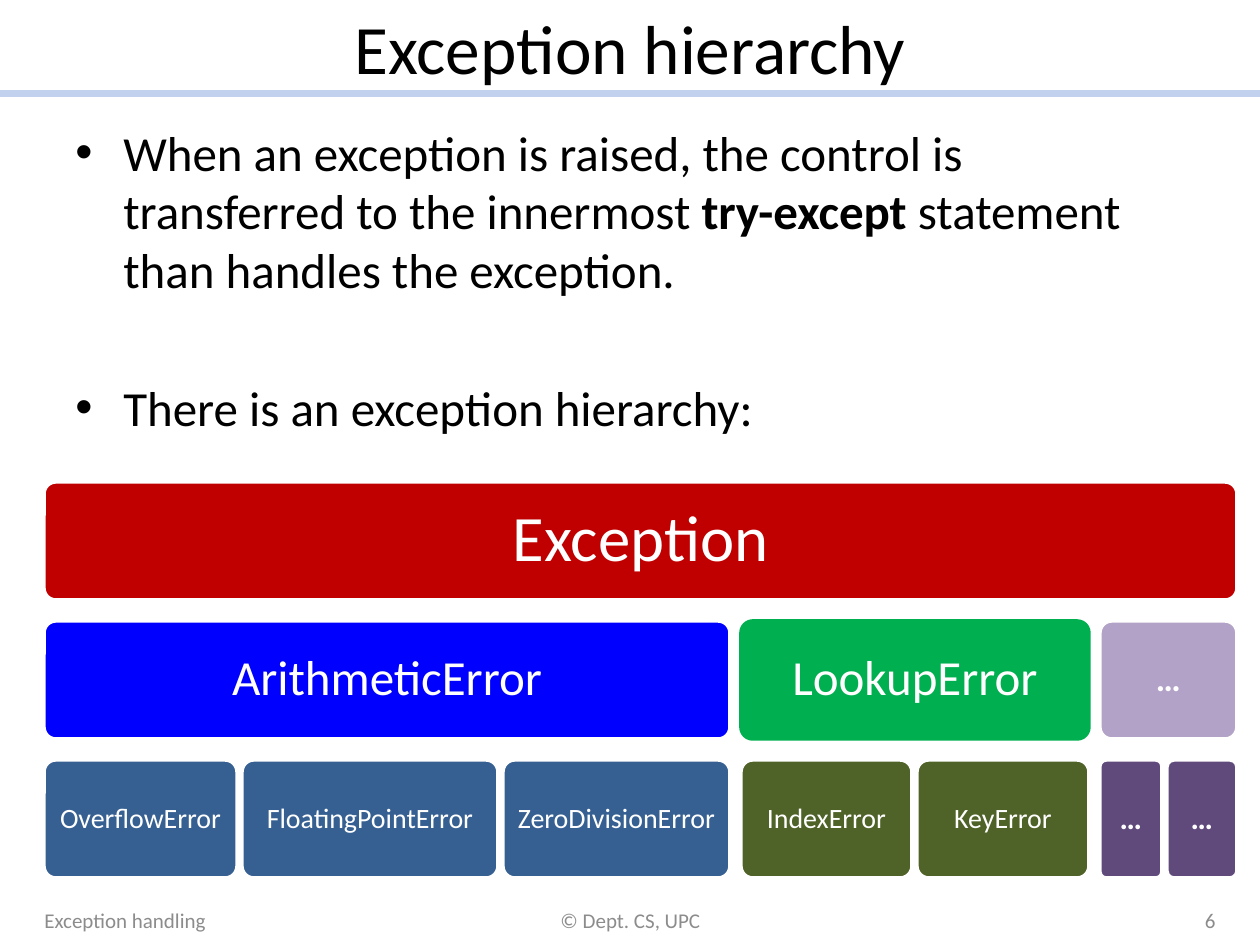
"""Build the slide on the exception hierarchy."""
from dataclasses import dataclass

from lxml import etree
from pptx import Presentation
from pptx import util as u
from pptx.dml.color import RGBColor
from pptx.enum import shapes, text
from pptx.oxml import ns

PX = 914400 // 126
CENTER, LEFT, RIGHT = text.PP_ALIGN.CENTER, text.PP_ALIGN.LEFT, text.PP_ALIGN.RIGHT


@dataclass(frozen=True)
class Theme:
    font: str = "Calibri"
    ink: str = "000000"
    paper: str = "FFFFFF"
    muted: str = "8C8C8C"
    rule: str = "C2D1ED"
    root: str = "C00000"
    title_size: float = 39.6
    body_size: int = 28
    footer_size: int = 12
    root_size: int = 37
    branch_size: int = 28
    more_size: int = 20
    leaf_size: int = 16
    more_leaf_size: int = 18


THEME = Theme()
TITLE = "Exception hierarchy"
BULLETS = [
    (["When an exception is raised, the control is transferred to the innermost ",
      ("try-except",), " statement than handles the exception."], 5.6),
    (["There is an exception hierarchy:"], 45),
]
ROOT = "Exception"
BRANCHES = [
    {"name": "ArithmeticError", "fill": "0000FF", "edge": "FFFFFF", "leaf_fill": "376092",
     "leaves": [("OverflowError", 193), ("FloatingPointError", 256), ("ZeroDivisionError", 227)]},
    {"name": "LookupError", "fill": "00B050", "edge": "00B050", "leaf_fill": "4F6228",
     "leaves": [("IndexError", 171), ("KeyError", 172)]},
    {"name": "…", "fill": "B3A2C7", "edge": "FFFFFF", "leaf_fill": "604A7B",
     "leaves": [("…", 62), ("…", 70)]},
]
FOOTERS = [("Exception handling", 32, 293, LEFT),
           ("© Dept. CS, UPC", 431, 399, CENTER),
           ("6", 935, 293, RIGHT)]

TREE_LEFT, TREE_TOP, ROW_PITCH, ROW_HEIGHT = 44, 482, 139, 118
LEAF_GAP, BRANCH_GAP = 5, 11


def px(*lengths):
    return [u.Emu(length * PX) for length in lengths]


def rgb(code):
    return RGBColor.from_string(code)


def write(paragraph, content, size, color=THEME.ink, bold=False, align=LEFT):
    """Write runs into a paragraph; a tuple marks a bold run."""
    paragraph.alignment = align
    for part in [content] if isinstance(content, str) else content:
        strong = isinstance(part, tuple)
        run = paragraph.add_run()
        run.text = part[0] if strong else part
        run.font.name = THEME.font
        run.font.size = u.Pt(size)
        run.font.bold = bold or strong
        run.font.color.rgb = rgb(color)


def add_bullet(paragraph):
    """Give a paragraph a hanging bullet."""
    properties = paragraph._p.get_or_add_pPr()
    properties.set("marL", str(48 * PX))
    properties.set("indent", str(-48 * PX))
    etree.SubElement(properties, ns.qn("a:buFont"), typeface="Arial")
    etree.SubElement(properties, ns.qn("a:buChar"), char="•")


def add_frame(slide, left, top, width, height, anchor):
    """Add a wrapping text box and return its text frame."""
    frame = slide.shapes.add_textbox(*px(left, top, width, height)).text_frame
    frame.word_wrap = True
    frame.vertical_anchor = anchor
    return frame


def add_node(slide, name, left, row, width, fill, size, edge=THEME.paper):
    """Add one rounded box of the hierarchy."""
    top = TREE_TOP + row * ROW_PITCH
    node = slide.shapes.add_shape(shapes.MSO_SHAPE.ROUNDED_RECTANGLE,
                                  *px(left, top, width, ROW_HEIGHT))
    node.adjustments[0] = 0.1
    node.shadow.inherit = False
    node.fill.solid()
    node.fill.fore_color.rgb = rgb(fill)
    node.line.color.rgb = rgb(edge)
    node.line.width = u.Pt(2)
    frame = node.text_frame
    frame.word_wrap = True
    frame.vertical_anchor = text.MSO_ANCHOR.MIDDLE
    frame.margin_left = frame.margin_right = frame.margin_top = frame.margin_bottom = px(9)[0]
    frame.paragraphs[0].line_spacing = 0.9
    write(frame.paragraphs[0], name, size, THEME.paper, bold=name == "…", align=CENTER)


def add_heading(slide):
    """Place the rule and the title."""
    rule = slide.shapes.add_connector(shapes.MSO_CONNECTOR.STRAIGHT, *px(0, 94, 1260, 94))
    rule.line.color.rgb = rgb(THEME.rule)
    rule.line.width = u.Pt(4)
    etree.SubElement(rule._element.spPr, ns.qn("a:effectLst"))
    title = slide.shapes.title
    title.left, title.top, title.width, title.height = px(63, 0, 1134, 94)
    title.text_frame.vertical_anchor = text.MSO_ANCHOR.MIDDLE
    write(title.text_frame.paragraphs[0], TITLE, THEME.title_size, align=CENTER)


def add_body(slide):
    """Place the bullets."""
    frame = add_frame(slide, 63, 116, 1134, 315, text.MSO_ANCHOR.TOP)
    for index, (content, space) in enumerate(BULLETS):
        paragraph = frame.add_paragraph() if index else frame.paragraphs[0]
        paragraph.space_before = u.Pt(space)
        add_bullet(paragraph)
        write(paragraph, content, THEME.body_size)


def add_tree(slide):
    """Place leaves side by side, each parent spanning its children."""
    left = TREE_LEFT
    for branch in BRANCHES:
        more = branch["name"] == "…"
        start = left
        for name, width in branch["leaves"]:
            add_node(slide, name, left, 2, width, branch["leaf_fill"],
                     THEME.more_leaf_size if more else THEME.leaf_size)
            left += width + LEAF_GAP
        end = left - LEAF_GAP
        add_node(slide, branch["name"], start, 1, end - start, branch["fill"],
                 THEME.more_size if more else THEME.branch_size, branch["edge"])
        left = end + BRANCH_GAP
    add_node(slide, ROOT, TREE_LEFT, 0, end - TREE_LEFT, THEME.root, THEME.root_size)


def main():
    deck = Presentation()
    deck.slide_width, deck.slide_height = px(1260, 945)
    slide = deck.slides.add_slide(deck.slide_layouts[5])
    add_heading(slide)
    add_body(slide)
    add_tree(slide)
    for label, left, width, align in FOOTERS:
        frame = add_frame(slide, left, 895, width, 50, text.MSO_ANCHOR.MIDDLE)
        write(frame.paragraphs[0], label, THEME.footer_size, THEME.muted, align=align)
    deck.save("out.pptx")


if __name__ == "__main__":
    main()
